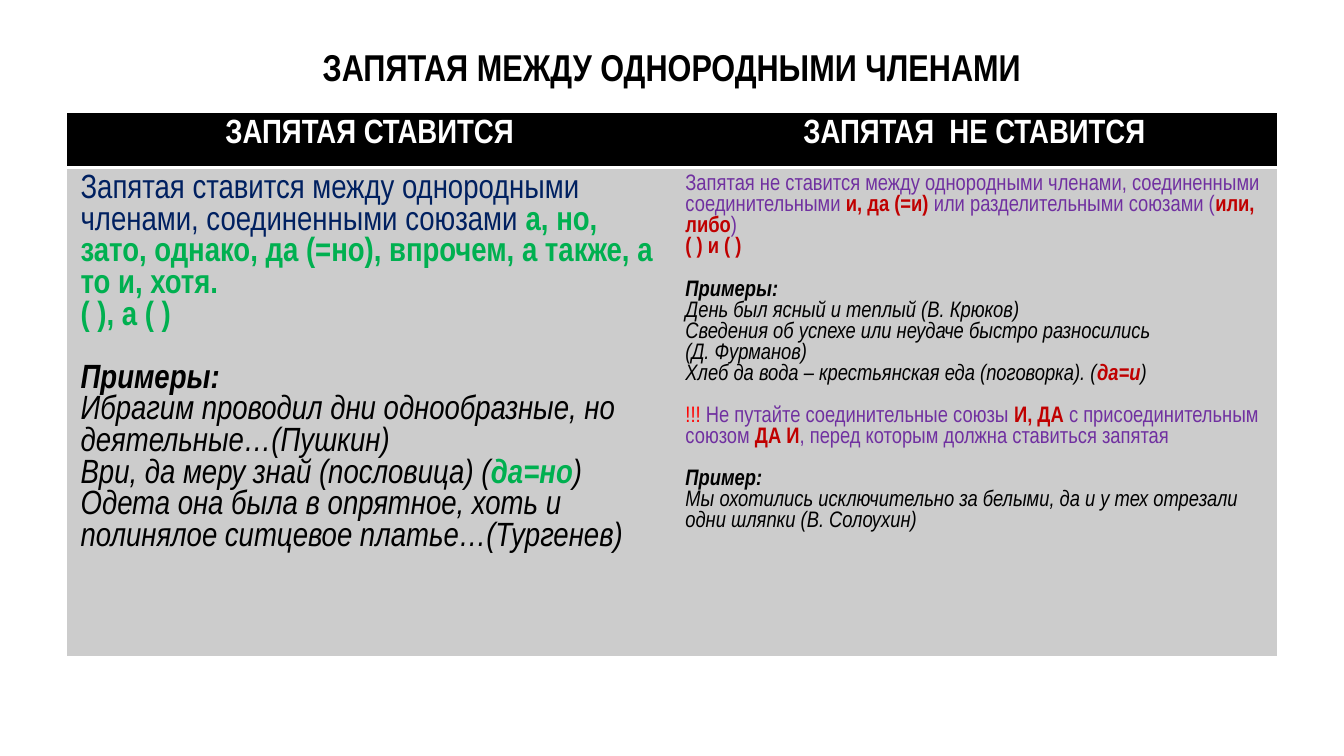
from lxml.etree import SubElement
from pptx import Presentation
from pptx.dml.color import RGBColor
from pptx.enum.text import MSO_ANCHOR, PP_ALIGN
from pptx.oxml.ns import qn
from pptx.util import Cm, Pt

BLACK = RGBColor(0x00, 0x00, 0x00)
WHITE = RGBColor(0xFF, 0xFF, 0xFF)
GRAY = RGBColor(0xCC, 0xCC, 0xCC)
NAVY = RGBColor(0x00, 0x20, 0x60)
GREEN = RGBColor(0x00, 0xB0, 0x50)
PURPLE = RGBColor(0x70, 0x30, 0xA0)
DARK_RED = RGBColor(0xC0, 0x00, 0x00)
RED = RGBColor(0xFF, 0x00, 0x00)

MARGIN = Cm(1.27)
CONTENT_WIDTH = Cm(22.86)
LINE_HEIGHT = 0.94  # of the font size
PLAIN_TABLE_STYLE = "{2D5ABB26-0587-4C30-8999-92F81FD0307C}"

# A run is (text, colour, style), where style may hold "b" and "i".
# A block is a list of paragraphs; blocks stand one line apart.
HEADINGS = ["ЗАПЯТАЯ СТАВИТСЯ", "ЗАПЯТАЯ  НЕ СТАВИТСЯ"]

COMMA_BLOCKS = [
    [
        [("Запятая ставится между однородными членами, соединенными союзами ", NAVY, ""),
         ("а, но, зато, однако, да (=но), впрочем, а также, а то и, хотя.", GREEN, "b")],
        [("( ), а ( )", GREEN, "b")],
    ],
    [
        [("Примеры:", BLACK, "bi")],
        [("Ибрагим проводил дни однообразные, но деятельные…(Пушкин)", BLACK, "i")],
        [("Ври, да меру знай (пословица) (", BLACK, "i"),
         ("да=но", GREEN, "bi"),
         (")", BLACK, "i")],
        [("Одета она была в опрятное, хоть и полинялое ситцевое платье…(Тургенев)", BLACK, "i")],
    ],
]

NO_COMMA_BLOCKS = [
    [
        [("Запятая не ставится между однородными членами, соединенными соединительными ", PURPLE, ""),
         ("и, да (=и) ", DARK_RED, "b"),
         ("или разделительными союзами (", PURPLE, ""),
         ("или, либо", DARK_RED, "b"),
         (")", PURPLE, "")],
        [("( ) и ( )", DARK_RED, "b")],
    ],
    [
        [("Примеры:", BLACK, "bi")],
        [("День был ясный и теплый (В. Крюков)", BLACK, "i")],
        [("Сведения об успехе или неудаче быстро разносились", BLACK, "i")],
        [("(Д. Фурманов)", BLACK, "i")],
        [("Хлеб да вода – крестьянская еда (поговорка). (", BLACK, "i"),
         ("да=и", DARK_RED, "bi"),
         (")", BLACK, "i")],
    ],
    [
        [("!!!", RED, ""),
         (" Не путайте соединительные союзы ", PURPLE, ""),
         ("И, ДА ", DARK_RED, "b"),
         ("с присоединительным союзом ", PURPLE, ""),
         ("ДА И", DARK_RED, "b"),
         (", перед которым должна ставиться запятая", PURPLE, "")],
    ],
    [
        [("Пример:", BLACK, "bi")],
        [("Мы охотились исключительно за белыми, да и у тех отрезали одни шляпки (В. Солоухин)",
          BLACK, "i")],
    ],
]


class SlideBuilder:
    font_name = "Arial Narrow"

    def __init__(self, slide):
        self.slide = slide

    def add_blocks(self, text_frame, blocks, size, alignment=PP_ALIGN.LEFT):
        """Fill a text frame, leaving one line's height between blocks."""
        paragraph = None
        for block_index, block in enumerate(blocks):
            for paragraph_index, runs in enumerate(block):
                first = paragraph is None
                paragraph = text_frame.paragraphs[0] if first else text_frame.add_paragraph()
                paragraph.alignment = alignment
                if block_index and not paragraph_index:
                    paragraph.space_before = Pt(round(size * LINE_HEIGHT, 1))
                for text, color, style in runs:
                    run = paragraph.add_run()
                    run.text = text
                    run.font.name = self.font_name
                    run.font.size = Pt(size)
                    run.font.color.rgb = color
                    run.font.bold = "b" in style
                    run.font.italic = "i" in style

    def title(self, text):
        box = self.slide.shapes.add_textbox(MARGIN, Cm(0.58), CONTENT_WIDTH, Cm(1.37))
        text_frame = box.text_frame
        text_frame.word_wrap = True
        text_frame.vertical_anchor = MSO_ANCHOR.MIDDLE
        self.add_blocks(text_frame, [[[(text, BLACK, "b")]]], 20, PP_ALIGN.CENTER)

    def table(self, top, row_heights, column_count):
        frame = self.slide.shapes.add_table(
            len(row_heights), column_count, MARGIN, top, CONTENT_WIDTH, sum(row_heights))
        table = frame.table
        table.first_row = table.horz_banding = False
        table._tbl.tblPr.find(qn("a:tableStyleId")).text = PLAIN_TABLE_STYLE
        for row, height in zip(table.rows, row_heights):
            row.height = height
        return table

    def cell(self, cell, fill, blocks, size, alignment=PP_ALIGN.LEFT):
        cell.fill.solid()
        cell.fill.fore_color.rgb = fill
        self.add_blocks(cell.text_frame, blocks, size, alignment)

    def bottom_border(self, cell, color, width):
        properties = cell._tc.get_or_add_tcPr()
        line = SubElement(properties, qn("a:lnB"), w=str(width))
        fill = SubElement(line, qn("a:solidFill"))
        SubElement(fill, qn("a:srgbClr"), val=str(color))
        properties.insert(0, line)  # borders come before the fill


def main():
    presentation = Presentation()
    presentation.slide_width = Cm(25.4)
    presentation.slide_height = Cm(14.29)
    builder = SlideBuilder(presentation.slides.add_slide(presentation.slide_layouts[6]))

    builder.title("ЗАПЯТАЯ МЕЖДУ ОДНОРОДНЫМИ ЧЛЕНАМИ")
    table = builder.table(Cm(2.13), [Cm(1.04), Cm(8.01)], len(HEADINGS))
    for column, heading in enumerate(HEADINGS):
        header = table.cell(0, column)
        builder.cell(header, BLACK, [[[(heading, WHITE, "b")]]], 18, PP_ALIGN.CENTER)
        builder.bottom_border(header, WHITE, Pt(2))
    builder.cell(table.cell(1, 0), GRAY, COMMA_BLOCKS, 18)
    builder.cell(table.cell(1, 1), GRAY, NO_COMMA_BLOCKS, 12)

    presentation.save("out.pptx")


if __name__ == "__main__":
    main()
